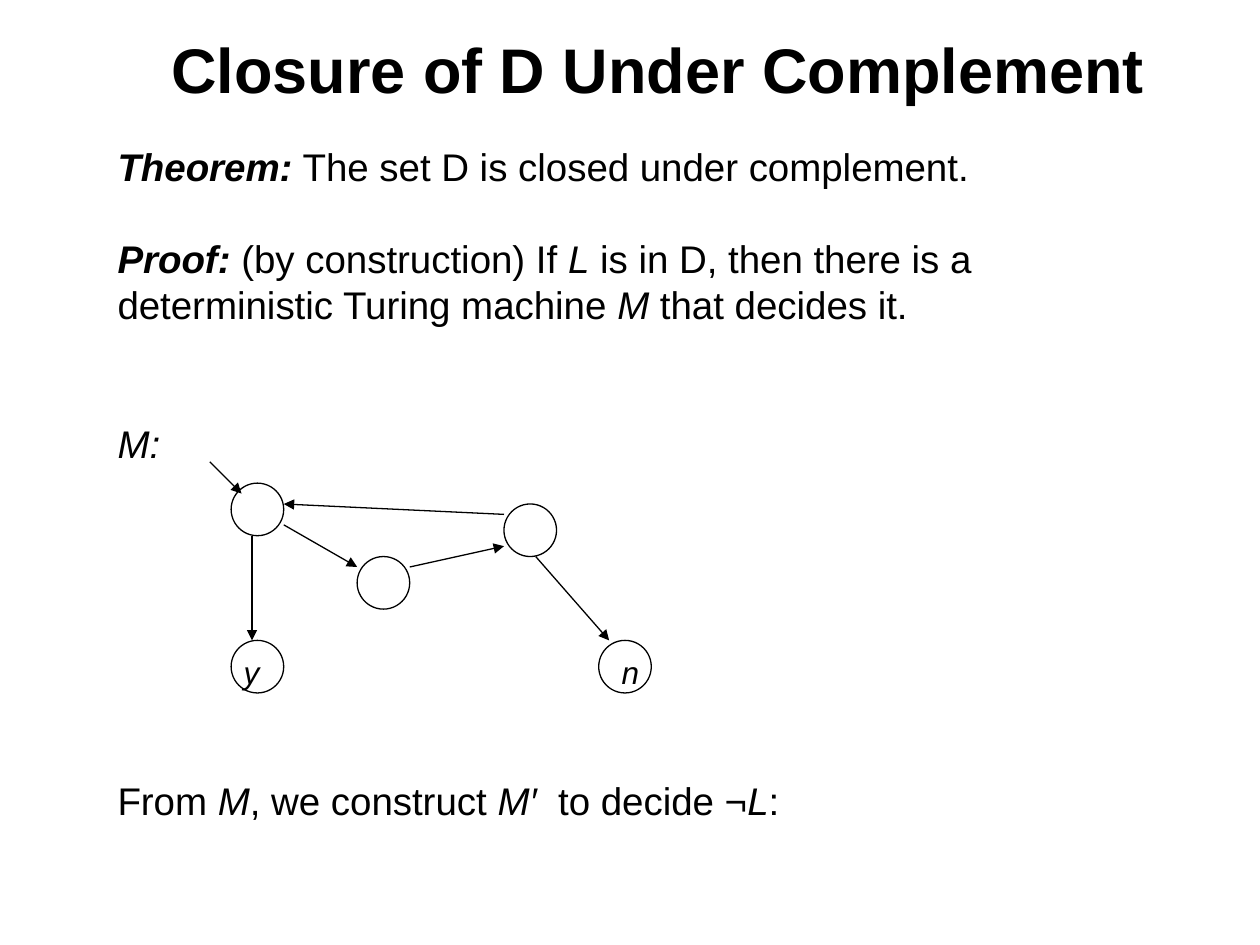
"""Build a slide on the closure of D under complement."""
from dataclasses import dataclass

from lxml import etree
from pptx import Presentation
from pptx.dml.color import RGBColor
from pptx.enum.shapes import MSO_CONNECTOR, MSO_SHAPE
from pptx.enum.text import MSO_ANCHOR, PP_ALIGN
from pptx.oxml.ns import qn
from pptx.util import Cm, Pt

STRAIGHT = MSO_CONNECTOR.STRAIGHT
OVAL = MSO_SHAPE.OVAL
TOP, MIDDLE = MSO_ANCHOR.TOP, MSO_ANCHOR.MIDDLE
LEFT, CENTER = PP_ALIGN.LEFT, PP_ALIGN.CENTER

COLORS = {"ink": "000000", "paper": "FFFFFF"}
STYLES = {
    "plain": {"bold": False, "italic": False},
    "bold": {"bold": True, "italic": False},
    "variable": {"bold": False, "italic": True},
    "heading": {"bold": True, "italic": True},
}
STATE_SIZE = 1.06
LINE_WIDTH = Pt(0.75)


@dataclass
class Span:
    text: str
    style: str = "plain"


@dataclass
class Para:
    spans: list[Span]
    size: float = 22
    line_height: float | None = 26.4
    before: float = 0
    align: PP_ALIGN = LEFT
    tabs: tuple[float, ...] = ()


@dataclass
class State:
    left: float
    top: float


@dataclass
class Arrow:
    start: tuple[float, float]
    end: tuple[float, float]


TITLE = [Para([Span("Closure of D Under Complement ", "bold")],
              size=36, line_height=None, align=CENTER)]
BODY = [
    Para([Span("Theorem:", "heading"),
          Span(" The set D is closed under complement.")]),
    Para([Span("Proof:", "heading"), Span(" (by construction) If "),
          Span("L", "variable"),
          Span(" is in D, then there is a deterministic Turing machine "),
          Span("M", "variable"), Span(" that decides it.")], before=26.4),
    Para([Span("M:", "variable")], before=52.8),
    Para([Span("\ty\tn", "variable")], size=18, line_height=22,
         before=106.5, tabs=(2.54, 10.16)),
    Para([Span("From "), Span("M", "variable"), Span(", we construct "),
          Span("M′ ", "variable"), Span(" to decide ¬"),
          Span("L", "variable"), Span(":")], before=49),
]
STATES = [
    State(4.66, 12.91), State(12.07, 12.91), State(7.2, 11.22),
    State(4.66, 9.74), State(10.16, 10.16),
]
ARROWS = [
    Arrow((4.23, 9.31), (4.87, 9.95)),
    Arrow((5.08, 10.8), (5.08, 12.91)),
    Arrow((5.72, 10.58), (7.2, 11.43)),
    Arrow((8.26, 11.43), (10.16, 11.01)),
    Arrow((10.8, 11.22), (12.28, 12.91)),
    Arrow((10.16, 10.37), (5.72, 10.16)),
]


def color(name: str) -> RGBColor:
    """Return a named colour."""
    return RGBColor.from_string(COLORS[name])


def add_tabs(paragraph, stops: tuple[float, ...]) -> None:
    """Give a paragraph left tab stops."""
    tab_list = etree.SubElement(paragraph._p.get_or_add_pPr(), qn("a:tabLst"))
    for stop in stops:
        etree.SubElement(tab_list, qn("a:tab"), pos=str(Cm(stop)), algn="l")


def add_text(page, bounds: tuple[float, ...], paras: list[Para],
             anchor: MSO_ANCHOR) -> None:
    """Add a wrapped text box with formatted paragraphs."""
    frame = page.shapes.add_textbox(*map(Cm, bounds)).text_frame
    frame.word_wrap = True
    frame.vertical_anchor = anchor
    for index, para in enumerate(paras):
        paragraph = frame.add_paragraph() if index else frame.paragraphs[0]
        paragraph.alignment = para.align
        if para.line_height:
            paragraph.line_spacing = Pt(para.line_height)
        if para.before:
            paragraph.space_before = Pt(para.before)
        if para.tabs:
            add_tabs(paragraph, para.tabs)
        for span in para.spans:
            run = paragraph.add_run()
            run.text = span.text
            formats = {"name": "Arial", "size": Pt(para.size), **STYLES[span.style]}
            for name, value in formats.items():
                setattr(run.font, name, value)
            run.font.color.rgb = color("ink")


def draw_line(line) -> None:
    """Apply the thin ink line."""
    line.color.rgb = color("ink")
    line.width = LINE_WIDTH


def add_state(page, state: State) -> None:
    """Add an unfilled machine state."""
    circle = page.shapes.add_shape(OVAL, Cm(state.left), Cm(state.top),
                                   Cm(STATE_SIZE), Cm(STATE_SIZE))
    circle.shadow.inherit = False
    circle.fill.background()
    draw_line(circle.line)


def add_arrow(page, arrow: Arrow) -> None:
    """Add a transition arrow."""
    connector = page.shapes.add_connector(
        STRAIGHT, *map(Cm, arrow.start + arrow.end))
    draw_line(connector.line)
    etree.SubElement(connector.line._get_or_add_ln(), qn("a:tailEnd"),
                     type="triangle")
    etree.SubElement(connector._element.spPr, qn("a:effectLst"))


def main() -> None:
    """Build and save the deck."""
    deck = Presentation()
    deck.slide_width, deck.slide_height = Cm(25.4), Cm(19.05)
    page = deck.slides.add_slide(deck.slide_layouts[6])
    page.background.fill.solid()
    page.background.fill.fore_color.rgb = color("paper")
    add_text(page, (1.48, 0.21, 23.92, 2.33), TITLE, MIDDLE)
    add_text(page, (2.12, 2.75, 22.05, 14.28), BODY, TOP)
    for state in STATES:
        add_state(page, state)
    for arrow in ARROWS:
        add_arrow(page, arrow)
    deck.save("out.pptx")


if __name__ == "__main__":
    main()
